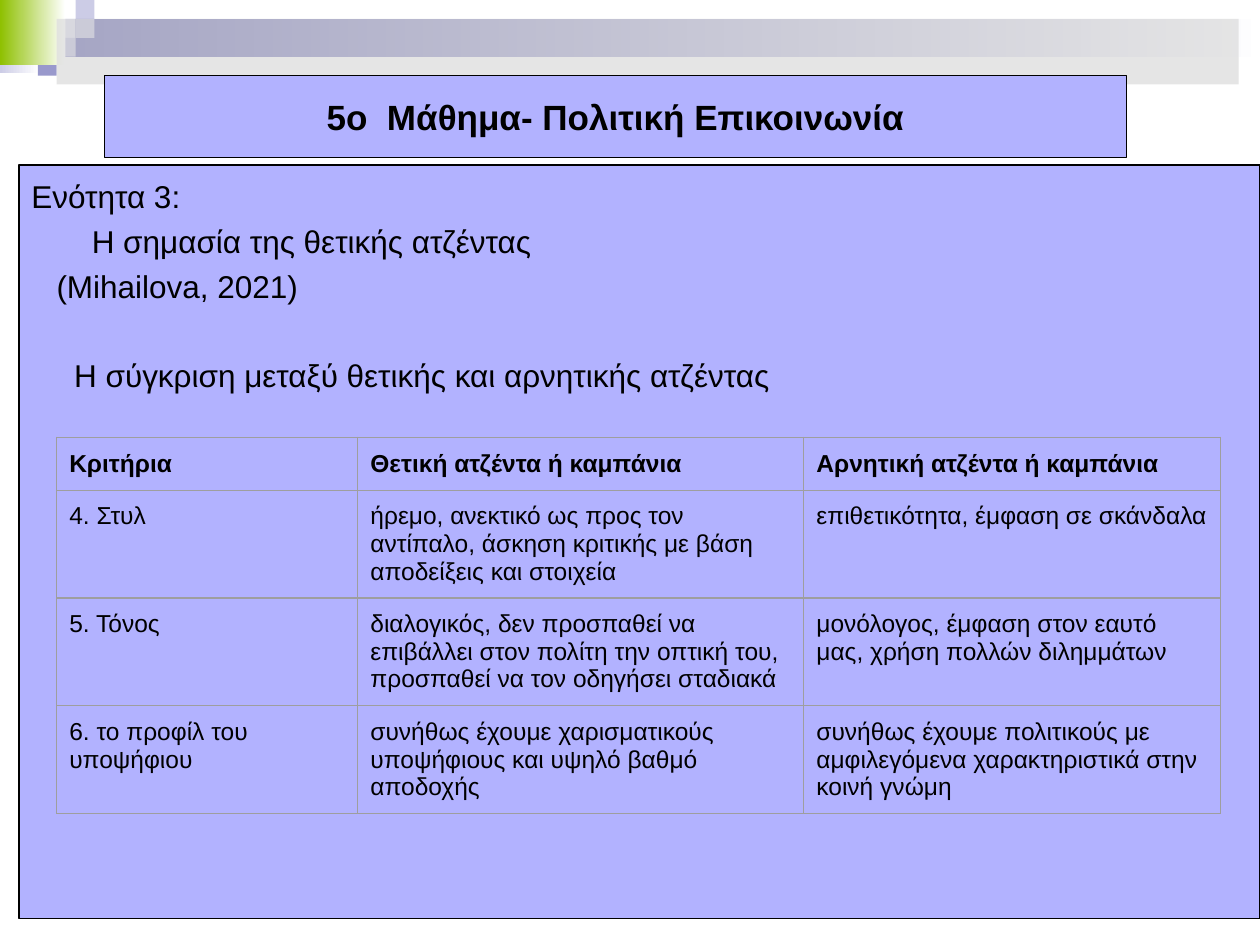
from lxml import etree
from pptx import Presentation
from pptx.dml.color import RGBColor
from pptx.enum.shapes import MSO_SHAPE
from pptx.enum.text import MSO_ANCHOR, PP_ALIGN
from pptx.oxml.ns import qn
from pptx.util import Inches, Pt

COLORS = {
    "text": "000000", "panel": "B2B2FF", "border": "9E9E9E", "white": "FFFFFF",
    "navy": "00007D", "lilac": "CCCCE6", "violet": "9999CC",
    "green": "8EC000", "grey": "DDDDDD",
}


class SlideBuilder:
    """Holds the style and the current slide."""

    font = "Arial"

    def __init__(self, slide):
        self.slide = slide

    def color(self, name):
        return RGBColor.from_string(COLORS[name])

    def rect(self, box, fill, fade_to=None, alpha=None, line=None):
        sp = self.slide.shapes.add_shape(MSO_SHAPE.RECTANGLE, *map(Inches, box))
        sp.shadow.inherit = False
        if fade_to:
            sp.fill.gradient()
            sp.fill.gradient_angle = 0
            for stop, name in zip(sp.fill.gradient_stops, (fill, fade_to)):
                stop.color.rgb = self.color(name)
        else:
            sp.fill.solid()
            sp.fill.fore_color.rgb = self.color(fill)
        if alpha:
            clr = sp.fill._xPr.find(qn("a:solidFill"))[0]
            etree.SubElement(clr, qn("a:alpha")).set("val", str(alpha * 1000))
        if line:
            sp.line.color.rgb = self.color(line)
            sp.line.width = Pt(0.75)
        else:
            sp.line.fill.background()
        return sp

    def format_runs(self, p, size, bold=False):
        for r in p.runs:
            r.font.name = self.font
            r.font.size = Pt(size)
            r.font.bold = bold
            r.font.color.rgb = self.color("text")

    def title(self, box, text):
        sp = self.rect(box, "panel", line="text")
        tf = sp.text_frame
        tf.text = text
        tf.word_wrap = True
        tf.vertical_anchor = MSO_ANCHOR.MIDDLE
        p = tf.paragraphs[0]
        p.alignment = PP_ALIGN.CENTER
        self.format_runs(p, 20, bold=True)

    def body(self, box, lines):
        """Each line is (text, first-line indent in inches, space before in points)."""
        sp = self.rect(box, "panel", line="text")
        tf = sp.text_frame
        tf.text = "\n".join(text for text, _, _ in lines)
        tf.word_wrap = True
        tf.vertical_anchor = MSO_ANCHOR.TOP
        for p, (_, indent, before) in zip(tf.paragraphs, lines):
            p.alignment = PP_ALIGN.JUSTIFY
            p.line_spacing = 1.15
            p.space_before = Pt(before)
            p._p.get_or_add_pPr().set("indent", str(Inches(indent)))
            self.format_runs(p, 18)

    def cell_borders(self, cell):
        tc_pr = cell._tc.get_or_add_tcPr()
        for i, side in enumerate(("lnL", "lnR", "lnT", "lnB")):
            ln = etree.Element(qn(f"a:{side}"), w=str(Pt(0.75)))
            fill = etree.SubElement(ln, qn("a:solidFill"))
            etree.SubElement(fill, qn("a:srgbClr")).set("val", COLORS["border"])
            tc_pr.insert(i, ln)

    def table(self, left, top, col_widths, row_heights, rows):
        frame = self.slide.shapes.add_table(
            len(rows), len(col_widths), Inches(left), Inches(top),
            Inches(sum(col_widths)), Inches(sum(row_heights)))
        table = frame.table
        table.first_row = table.horz_banding = False
        for col, width in zip(table.columns, col_widths):
            col.width = Inches(width)
        for i, (row, height) in enumerate(zip(table.rows, row_heights)):
            row.height = Inches(height)
            for cell, text in zip(row.cells, rows[i]):
                cell.text_frame.text = text
                cell.margin_left = cell.margin_right = Inches(0.1)
                cell.margin_top = cell.margin_bottom = Inches(0.1)
                cell.fill.background()
                self.cell_borders(cell)
                self.format_runs(cell.text_frame.paragraphs[0], 14, bold=i == 0)


def main():
    prs = Presentation()
    prs.slide_width, prs.slide_height = Inches(10), Inches(7.5)
    s = SlideBuilder(prs.slides.add_slide(prs.slide_layouts[6]))

    # Header gradients and mosaic squares
    s.rect((0, 0, 0.31, 0.58), "lilac", fade_to="white")
    s.rect((0.45, 0.15, 9.55, 0.3), "navy", fade_to="white")
    unit = 0.15
    for col, row, name in ((3, 1, "lilac"), (4, 0, "lilac"), (4, 1, "violet"),
                           (3, 2, "violet"), (2, 3, "violet")):
        s.rect((col * unit, row * unit, unit, unit), name)

    # Body panel
    s.body((0.15, 1.31, 9.85, 5.98), [
        ("Ενότητα 3:", 0, 1),
        ("Η σημασία της θετικής ατζέντας", 0.48, 1),
        ("(Mihailova, 2021)", 0.2, 1),
        ("H σύγκριση μεταξύ θετικής και αρνητικής ατζέντας", 0.34, 26),
    ])

    # Green corner and translucent band
    s.rect((0, 0, 0.52, 0.52), "green", fade_to="white")
    s.rect((0.45, 0.15, 9.38, 0.52), "grey", alpha=75)

    # Title
    s.title((0.83, 0.6, 8.11, 0.65), "5ο  Μάθημα- Πολιτική Επικοινωνία")

    # Comparison table
    s.table(0.45, 3.47, (2.39, 3.54, 3.31), (0.42, 0.85, 0.85, 0.85), [
        ("Κριτήρια", "Θετική ατζέντα ή καμπάνια", "Αρνητική ατζέντα ή καμπάνια"),
        ("4. Στυλ",
         "ήρεμο, ανεκτικό ως προς τον αντίπαλο, άσκηση κριτικής με βάση "
         "αποδείξεις και στοιχεία",
         "επιθετικότητα, έμφαση σε σκάνδαλα"),
        ("5. Τόνος",
         "διαλογικός, δεν προσπαθεί να επιβάλλει στον πολίτη την οπτική του, "
         "προσπαθεί να τον οδηγήσει σταδιακά",
         "μονόλογος, έμφαση στον εαυτό μας, χρήση πολλών διλημμάτων"),
        ("6. το προφίλ του υποψήφιου",
         "συνήθως έχουμε χαρισματικούς υποψήφιους και υψηλό βαθμό αποδοχής",
         "συνήθως έχουμε πολιτικούς με αμφιλεγόμενα χαρακτηριστικά στην "
         "κοινή γνώμη"),
    ])

    prs.save("out.pptx")


if __name__ == "__main__":
    main()
